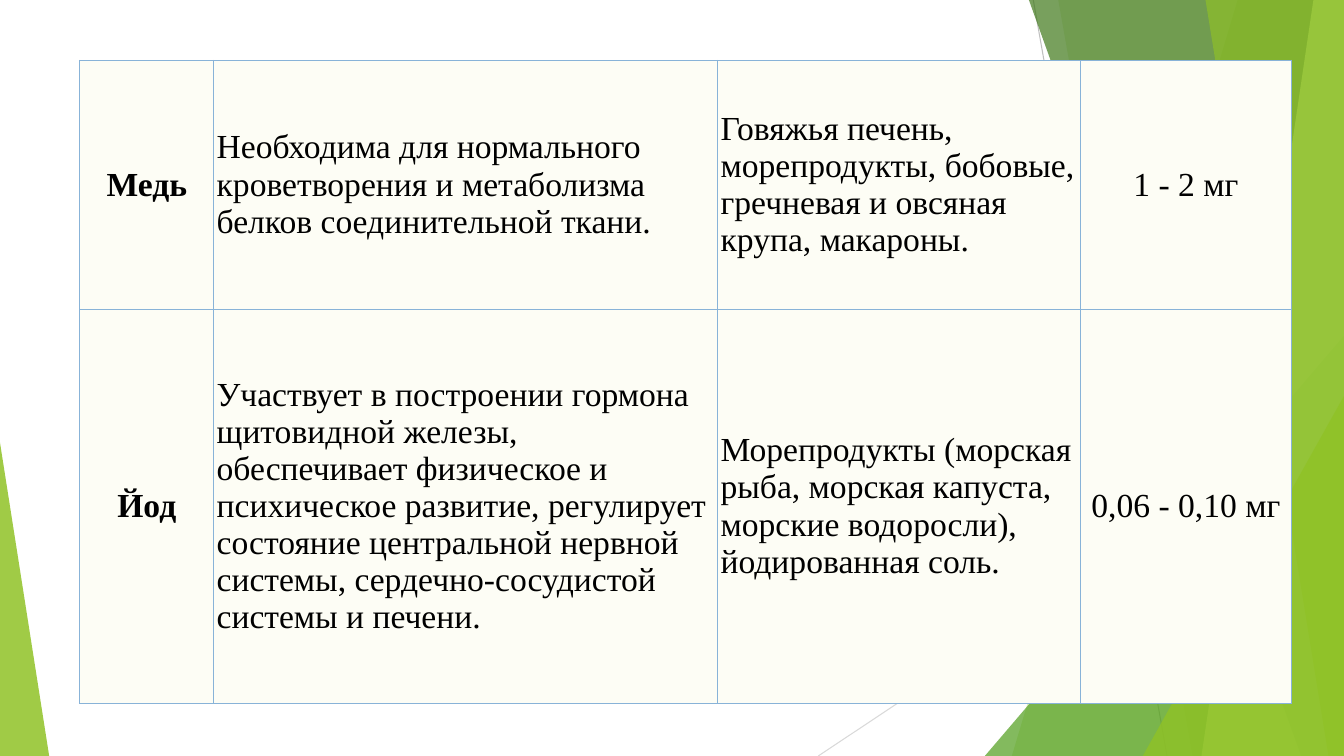
from dataclasses import dataclass

from lxml.etree import SubElement
from pptx import Presentation
from pptx.dml.color import RGBColor
from pptx.enum.shapes import MSO_CONNECTOR, MSO_SHAPE
from pptx.enum.text import MSO_ANCHOR, PP_ALIGN
from pptx.oxml.ns import qn
from pptx.util import Cm, Pt


@dataclass(frozen=True)
class Theme:
    font: str = "Times New Roman"
    text_size: int = 24
    line_width: float = 0.75
    text: str = "000000"
    cell: str = "FDFDF5"
    border: str = "88B3D8"
    dark_ray: str = "BFBFBF"
    light_ray: str = "D9D9D9"
    lime: str = "90C226"
    pale: str = "C0E474"
    green: str = "54A021"
    forest: str = "3F7819"


THEME = Theme()
SLIDE_WIDTH, SLIDE_HEIGHT = 33.87, 19.05

# Rays: start x, start y, end x, colour; each ends at the bottom edge
RAYS = [
    (26.04, 0, 29.41, THEME.dark_ray),
    (SLIDE_WIDTH, 10.24, 20.62, THEME.light_ray),
]
# Facets from back to front. A band has a top x and a bottom x and reaches
# the right edge; a corner has a left x and a top y.
FACETS = [
    ("band", 31.19, 25.5, THEME.lime, 30),
    ("band", 26.67, 30.05, THEME.lime, 20),
    ("corner", 24.82, 8.46, THEME.green, 72),
    ("band", 25.93, 32.79, THEME.forest, 70),
    ("band", 33.1, 30.28, THEME.pale, 70),
    ("band", 30.38, 33.48, THEME.lime, 65),
    ("corner", 28.8, 9.98, THEME.lime, 80),
]

MINERALS = [
    ("Медь",
     "Необходима для нормального кроветворения и метаболизма белков "
     "соединительной ткани.",
     "Говяжья печень, морепродукты, бобовые, гречневая и овсяная крупа, "
     "макароны.",
     "1 - 2 мг"),
    ("Йод",
     "Участвует в построении гормона щитовидной железы, обеспечивает "
     "физическое и психическое развитие, регулирует состояние центральной "
     "нервной системы, сердечно-сосудистой системы и печени.",
     "Морепродукты (морская рыба, морская капуста, морские водоросли), "
     "йодированная соль.",
     "0,06 - 0,10 мг"),
]
ALIGNMENTS = [PP_ALIGN.CENTER, PP_ALIGN.LEFT, PP_ALIGN.LEFT, PP_ALIGN.CENTER]
COLUMN_SHARES = [3.38, 12.7, 9.14, 5.31]
ROW_SHARES = [6.27, 9.93]


def set_all(target, formats):
    for attribute, value in formats.items():
        setattr(target, attribute, value)


def paint(facet, colour, opacity):
    facet.shadow.inherit = False
    facet.line.fill.background()
    facet.fill.solid()
    facet.fill.fore_color.rgb = RGBColor.from_string(colour)
    tint = facet.fill._xPr.find(".//" + qn("a:srgbClr"))
    SubElement(tint, qn("a:alpha"), val=str(opacity * 1000))


def add_ray(slide, x1, y1, x2, y2, colour):
    ray = slide.shapes.add_connector(
        MSO_CONNECTOR.STRAIGHT, Cm(x1), Cm(y1), Cm(x2), Cm(y2))
    ray.line.color.rgb = RGBColor.from_string(colour)
    ray.line.width = Pt(THEME.line_width)
    SubElement(ray._element.spPr, qn("a:effectLst"))


def add_corner(slide, left, top, width, height, apex, colour, opacity):
    corner = slide.shapes.add_shape(
        MSO_SHAPE.ISOSCELES_TRIANGLE,
        Cm(left), Cm(top), Cm(width), Cm(height))
    corner.adjustments[0] = apex
    paint(corner, colour, opacity)


def add_band(slide, top_x, bottom_x, top, right, bottom, colour, opacity):
    outline = slide.shapes.build_freeform(Cm(top_x), Cm(top))
    outline.add_line_segments(
        [(Cm(right), Cm(top)), (Cm(right), Cm(bottom)),
         (Cm(bottom_x), Cm(bottom))], close=True)
    paint(outline.convert_to_shape(), colour, opacity)


def add_backdrop(slide, left, top, width, height):
    right, bottom = left + width, top + height
    for x1, y1, x2, colour in RAYS:
        add_ray(slide, left + x1, top + y1, left + x2, bottom, colour)
    for kind, first, second, colour, opacity in FACETS:
        if kind == "band":
            add_band(slide, left + first, left + second, top, right, bottom,
                     colour, opacity)
        else:
            add_corner(slide, left + first, top + second, width - first,
                       height - second, 1, colour, opacity)
    # Wedge in the lower left corner
    add_corner(slide, left, top + 11.15, 1.24, height - 11.15, 0,
               THEME.lime, 85)


def add_borders(cell):
    properties = cell._tc.get_or_add_tcPr()
    for side in ("lnL", "lnR", "lnT", "lnB"):
        edge = SubElement(properties, qn(f"a:{side}"),
                          w=str(Pt(THEME.line_width)))
        fill = SubElement(edge, qn("a:solidFill"))
        SubElement(fill, qn("a:srgbClr"), val=THEME.border)


def fill_cell(cell, text, alignment, bold):
    add_borders(cell)
    cell.fill.solid()
    cell.fill.fore_color.rgb = RGBColor.from_string(THEME.cell)
    inset = Cm(0.07)
    set_all(cell, {
        "text": text, "vertical_anchor": MSO_ANCHOR.MIDDLE,
        "margin_left": inset, "margin_right": inset,
        "margin_top": inset, "margin_bottom": inset,
    })
    paragraph = cell.text_frame.paragraphs[0]
    paragraph.alignment = alignment
    font = paragraph.runs[0].font
    set_all(font, {"name": THEME.font, "size": Pt(THEME.text_size),
                   "bold": bold})
    font.color.rgb = RGBColor.from_string(THEME.text)


def add_minerals(slide, left, top, width, height):
    minerals = slide.shapes.add_table(
        len(MINERALS), len(COLUMN_SHARES),
        Cm(left), Cm(top), Cm(width), Cm(height)).table
    set_all(minerals, {"first_row": False, "horz_banding": False})
    for column, share in zip(minerals.columns, COLUMN_SHARES):
        column.width = Cm(width * share / sum(COLUMN_SHARES))
    for row, share in zip(minerals.rows, ROW_SHARES):
        row.height = Cm(height * share / sum(ROW_SHARES))
    for row, texts in zip(minerals.rows, MINERALS):
        for index, (cell, text) in enumerate(zip(row.cells, texts)):
            fill_cell(cell, text, ALIGNMENTS[index], bold=index == 0)


def main():
    presentation = Presentation()
    set_all(presentation, {"slide_width": Cm(SLIDE_WIDTH),
                           "slide_height": Cm(SLIDE_HEIGHT)})
    slide = presentation.slides.add_slide(presentation.slide_layouts[6])
    add_backdrop(slide, 0, 0, SLIDE_WIDTH, SLIDE_HEIGHT)
    add_minerals(slide, 2.01, 1.52, 30.53, 16.2)
    presentation.save("out.pptx")


if __name__ == "__main__":
    main()
